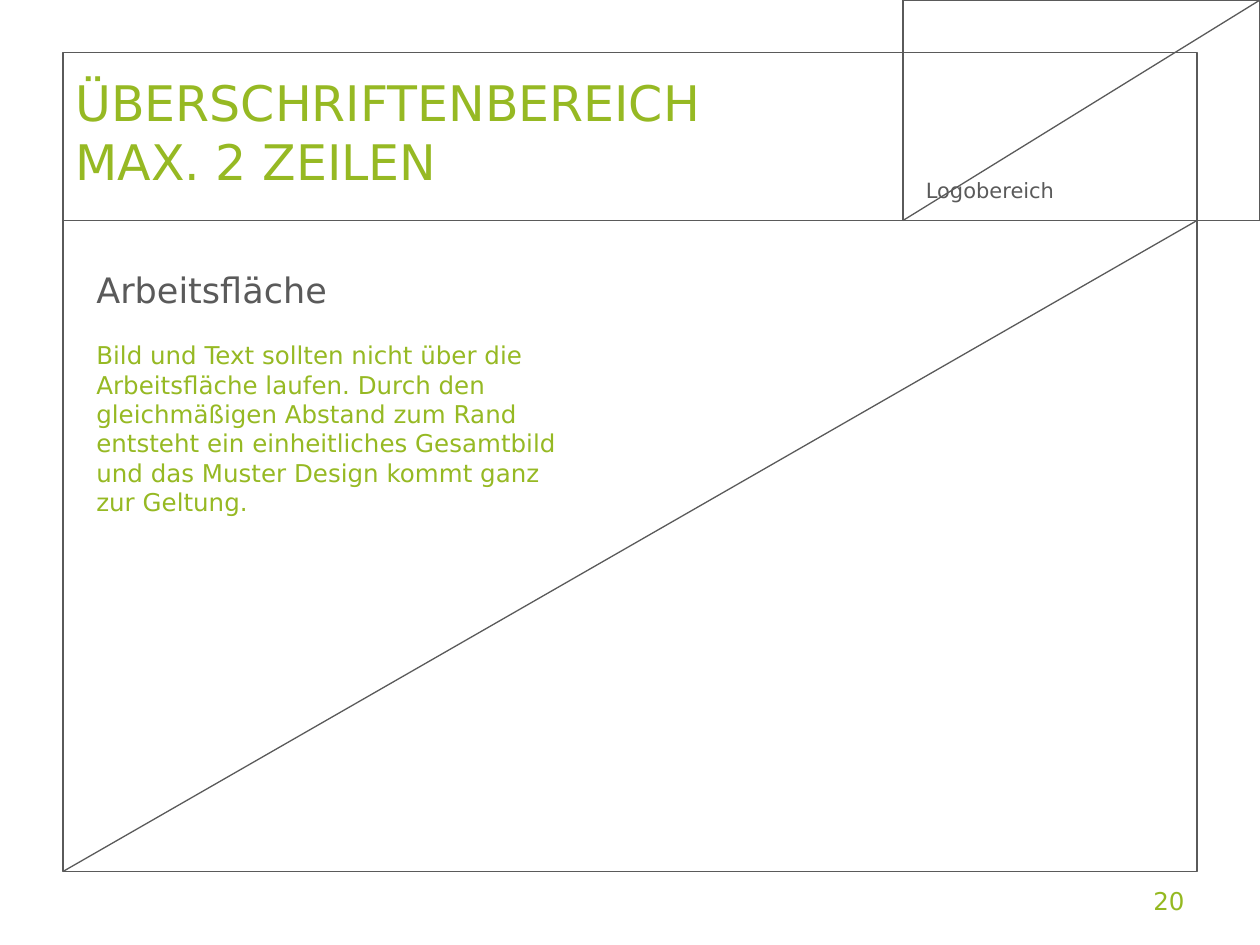
from dataclasses import dataclass

from pptx import Presentation
from pptx import util as u
from pptx.dml.color import RGBColor
from pptx.enum import shapes, text
from pptx.oxml.ns import qn

COLUMNS, ROWS = 120, 90  # square grid cells, twelve to the inch


@dataclass(frozen=True)
class Theme:
    font: str = "DejaVu Sans"
    green: str = "96B923"
    number_green: str = "95B921"
    grey: str = "5A5A5A"
    title_size: int = 28
    heading_size: int = 20
    body_size: int = 14
    label_size: int = 12
    line_width: float = 0.75


@dataclass(frozen=True)
class Area:
    """A rectangle in grid columns and rows."""
    column: float
    row: float
    columns: float
    rows: float


@dataclass(frozen=True)
class Line:
    """A straight line between two grid points."""
    start: tuple[float, float]
    end: tuple[float, float]


@dataclass(frozen=True)
class Label:
    area: Area
    lines: tuple[str, ...]
    size: int
    color: str
    anchor: text.MSO_ANCHOR = text.MSO_ANCHOR.TOP
    align: text.PP_ALIGN = text.PP_ALIGN.LEFT
    grows: bool = True


THEME = Theme()
LEFT, RIGHT, TOP, BOTTOM = 6, 114, 5, 83
DIVIDER, LOGO_LEFT, TEXT_LEFT = 21, 86, 8

FRAME = Area(LEFT, TOP, RIGHT - LEFT, BOTTOM - TOP)
LOGO = Area(LOGO_LEFT, 0, COLUMNS - LOGO_LEFT, DIVIDER)
DIVIDER_LINE = Line((LEFT, DIVIDER), (RIGHT, DIVIDER))
WORK_DIAGONAL = Line((LEFT, BOTTOM), (RIGHT, DIVIDER))
LOGO_DIAGONAL = Line((LOGO_LEFT, DIVIDER), (COLUMNS, 0))

TITLE = Label(Area(LEFT, TOP, 76.3, 15), ("ÜBERSCHRIFTENBEREICH", "MAX. 2 ZEILEN"),
              THEME.title_size, THEME.green, text.MSO_ANCHOR.MIDDLE, grows=False)
LABELS = (
    Label(Area(TEXT_LEFT, 25, 34, 5.25), ("Arbeitsfläche",),
          THEME.heading_size, THEME.grey),
    Label(Area(TEXT_LEFT, 31.8, 48, 18.1),
          ("Bild und Text sollten nicht über die Arbeitsfläche laufen. "
           "Durch den gleichmäßigen Abstand zum Rand entsteht ein einheitliches "
           "Gesamtbild und das Muster Design kommt ganz zur Geltung.",),
          THEME.body_size, THEME.green),
    Label(Area(87, 16.3, 19, 3.6), ("Logobereich",), THEME.label_size, THEME.grey),
)
PAGE_NUMBER = Label(Area(LOGO_LEFT, 83.4, RIGHT - LOGO_LEFT, 4.8), ("20",),
                    THEME.body_size, THEME.number_green, text.MSO_ANCHOR.MIDDLE,
                    text.PP_ALIGN.RIGHT, grows=False)


def grid(cells: float) -> u.Length:
    return u.Inches(cells / 12)


def bounds(area: Area) -> tuple[u.Length, ...]:
    return tuple(map(grid, (area.column, area.row, area.columns, area.rows)))


def style_line(line) -> None:
    line.color.rgb = RGBColor.from_string(THEME.grey)
    line.width = u.Pt(THEME.line_width)


def draw_rectangle(page, area: Area) -> None:
    box = page.shapes.add_shape(shapes.MSO_SHAPE.RECTANGLE, *bounds(area))
    box.shadow.inherit = False
    box.fill.background()
    style_line(box.line)


def draw_line(page, line: Line) -> None:
    connector = page.shapes.add_connector(
        shapes.MSO_CONNECTOR.STRAIGHT, *map(grid, line.start + line.end))
    style_line(connector.line)
    properties = connector._element.spPr
    properties.append(properties.makeelement(qn("a:effectLst"), {}))


def write_label(box, label: Label) -> None:
    frame = box.text_frame
    frame.word_wrap = True
    frame.auto_size = (text.MSO_AUTO_SIZE.SHAPE_TO_FIT_TEXT if label.grows
                       else text.MSO_AUTO_SIZE.NONE)
    frame.vertical_anchor = label.anchor
    para = frame.paragraphs[0]
    para.alignment = label.align
    for index, line in enumerate(label.lines):
        if index:
            para.add_line_break()
        span = para.add_run()
        span.text = line
        span.font.name = THEME.font
        span.font.size = u.Pt(label.size)
        span.font.color.rgb = RGBColor.from_string(label.color)


def draw_label(page, label: Label) -> None:
    write_label(page.shapes.add_textbox(*bounds(label.area)), label)


def draw_title(page, label: Label) -> None:
    title = page.shapes.title
    title.left, title.top, title.width, title.height = bounds(label.area)
    write_label(title, label)


def main() -> None:
    deck = Presentation()
    deck.slide_width, deck.slide_height = grid(COLUMNS), grid(ROWS)
    page = deck.slides.add_slide(deck.slide_layouts.get_by_name("Title Only"))
    draw_title(page, TITLE)
    draw_rectangle(page, FRAME)
    draw_line(page, DIVIDER_LINE)
    draw_rectangle(page, LOGO)
    draw_line(page, WORK_DIAGONAL)
    for label in LABELS:
        draw_label(page, label)
    draw_line(page, LOGO_DIAGONAL)
    draw_label(page, PAGE_NUMBER)
    deck.save("out.pptx")


if __name__ == "__main__":
    main()
